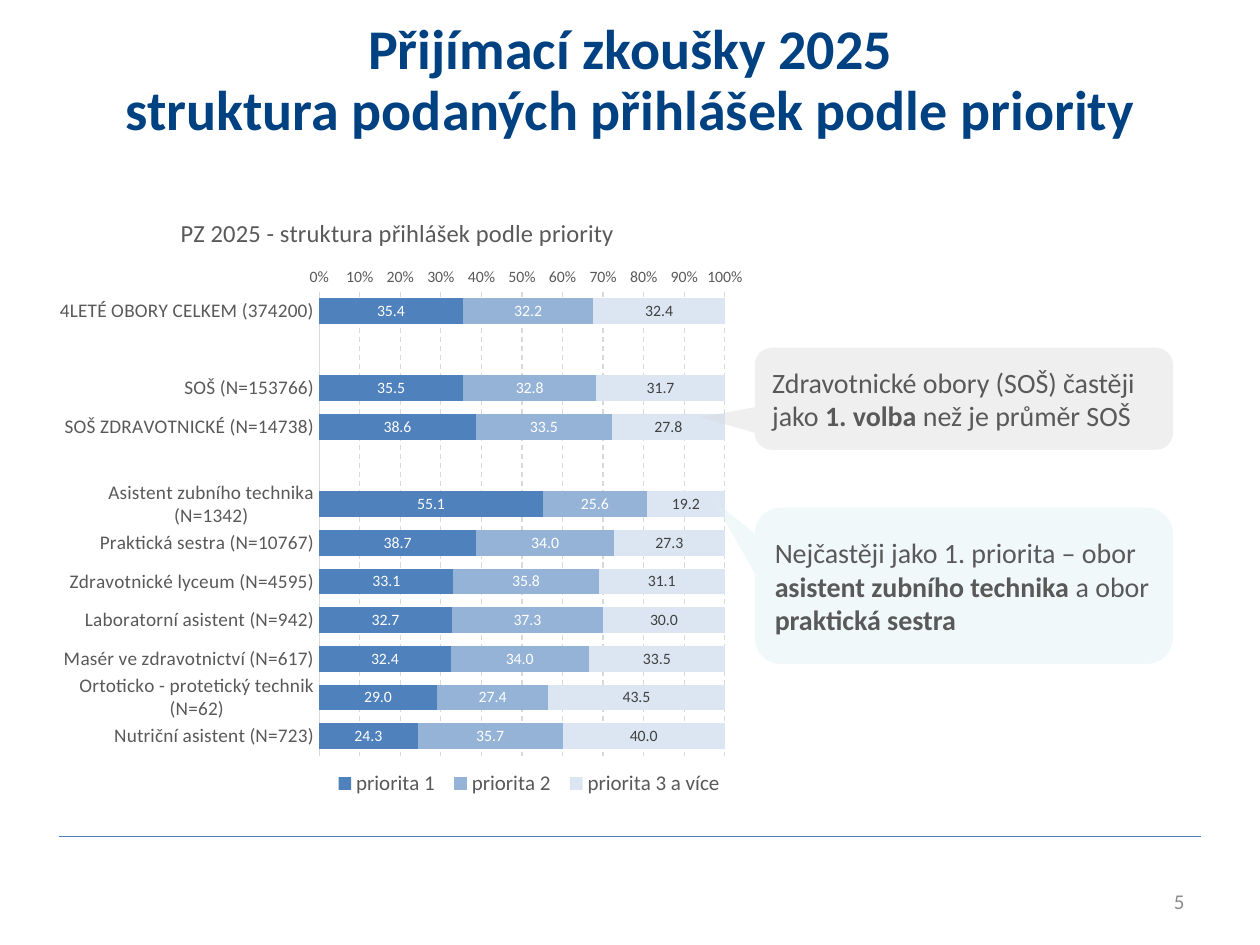
"""Build the slide on the priority structure of 2025 applications."""
from dataclasses import dataclass

from lxml import etree
from pptx import Presentation
from pptx import util as u
from pptx.chart.data import CategoryChartData
from pptx.dml.color import RGBColor
from pptx.enum import chart as charts
from pptx.enum import dml, shapes, text
from pptx.oxml import ns

FONT = "Calibri"
NAVY = RGBColor(0x00, 0x41, 0x82)
RULE_BLUE = RGBColor(0x4B, 0x7E, 0xBC)
DARK_GRAY = RGBColor(0x59, 0x59, 0x59)
NUMBER_GRAY = RGBColor(0x8C, 0x8C, 0x8C)
LIGHT_GRAY = RGBColor(0xD9, 0xD9, 0xD9)
LABEL_GRAY = RGBColor(0x40, 0x40, 0x40)
WHITE = RGBColor(0xFF, 0xFF, 0xFF)
ICE = RGBColor(0xDB, 0xEE, 0xF4)
BLUE = RGBColor(0x4F, 0x81, 0xBD)
MID_BLUE = RGBColor(0x95, 0xB3, 0xD7)
PALE_BLUE = RGBColor(0xDC, 0xE6, 0xF2)


@dataclass(frozen=True)
class Priority:
    name: str
    fill: RGBColor
    label: RGBColor
    shares: tuple


@dataclass(frozen=True)
class Callout:
    top: float
    height: float
    tip: tuple
    fill: RGBColor
    spans: tuple


CATEGORIES = (
    "4LETÉ OBORY CELKEM (374200)", "", "SOŠ (N=153766)",
    "SOŠ ZDRAVOTNICKÉ (N=14738)", "", "Asistent zubního technika (N=1342)",
    "Praktická sestra (N=10767)", "Zdravotnické lyceum (N=4595)",
    "Laboratorní asistent (N=942)", "Masér ve zdravotnictví (N=617)",
    "Ortoticko - protetický technik (N=62)", "Nutriční asistent (N=723)",
)
PRIORITIES = (
    Priority("priorita 1", BLUE, WHITE,
             (35.4, None, 35.5, 38.6, None, 55.1, 38.7, 33.1, 32.7, 32.4, 29.0, 24.3)),
    Priority("priorita 2", MID_BLUE, WHITE,
             (32.2, None, 32.8, 33.5, None, 25.6, 34.0, 35.8, 37.3, 34.0, 27.4, 35.7)),
    Priority("priorita 3 a více", PALE_BLUE, LABEL_GRAY,
             (32.4, None, 31.7, 27.8, None, 19.2, 27.3, 31.1, 30.0, 33.5, 43.5, 40.0)),
)
CALLOUTS = (
    Callout(2.76, 0.81, (-0.63, 0.18), LIGHT_GRAY, (
        ("Zdravotnické obory (SOŠ) častěji jako ", False),
        ("1. volba ", True), ("než je průměr SOŠ", False))),
    Callout(4.03, 1.24, (-0.6, -0.55), ICE, (
        ("Nejčastěji jako 1. priorita – obor ", False),
        ("asistent zubního technika ", True), ("a obor ", False),
        ("praktická sestra", True))),
)


def style_font(font, size: float, color: RGBColor, bold: bool = False) -> None:
    font.name, font.size, font.bold = FONT, u.Pt(size), bold
    font.color.rgb = color


def box_at(left: float, top: float, width: float, height: float) -> tuple:
    return tuple(u.Inches(value) for value in (left, top, width, height))


def place_in_chart(parent, index: int, left: float, top: float,
                   width: float, height: float, inner: bool = False) -> None:
    for old in parent.findall(ns.qn("c:layout")):
        parent.remove(old)
    layout = etree.Element(ns.qn("c:layout"))
    manual = etree.SubElement(layout, ns.qn("c:manualLayout"))
    settings = [("layoutTarget", "inner")] if inner else []
    settings += [("xMode", "edge"), ("yMode", "edge"), ("x", left),
                 ("y", top), ("w", width), ("h", height)]
    for tag, value in settings:
        etree.SubElement(manual, ns.qn(f"c:{tag}")).set("val", str(value))
    parent.insert(index, layout)


def add_title(page) -> None:
    title = page.shapes.title
    title.left, title.top, title.width, title.height = box_at(0.33, 0.12, 9.35, 1.06)
    frame = title.text_frame
    frame.text = "Přijímací zkoušky 2025\nstruktura podaných přihlášek podle priority"
    frame.auto_size = text.MSO_AUTO_SIZE.NONE
    frame.vertical_anchor = text.MSO_ANCHOR.MIDDLE
    for para in frame.paragraphs:
        para.alignment, para.line_spacing = text.PP_ALIGN.CENTER, 0.9
        style_font(para.runs[0].font, 32, NAVY, True)


def add_priority_chart(page) -> None:
    data = CategoryChartData(number_format="0.0")
    data.categories = CATEGORIES
    for priority in PRIORITIES:
        data.add_series(priority.name, priority.shares)
    chart = page.shapes.add_chart(charts.XL_CHART_TYPE.BAR_STACKED_100,
                                  *box_at(0.33, 1.53, 5.65, 4.91), data).chart
    style_font(chart.font, 10, DARK_GRAY)
    chart.has_title = True
    heading = chart.chart_title.text_frame
    heading.text = "PZ 2025 - struktura přihlášek podle priority"
    style_font(heading.paragraphs[0].runs[0].font, 14, DARK_GRAY)

    plot = chart.plots[0]
    plot.gap_width, plot.overlap, plot.vary_by_categories = 50, 100, False
    for series, priority in zip(plot.series, PRIORITIES):
        series.format.fill.solid()
        series.format.fill.fore_color.rgb = priority.fill
        labels = series.data_labels
        labels.show_value = True
        labels.number_format, labels.number_format_is_linked = "0.0", False
        style_font(labels.font, 9, priority.label)

    for axis, size in ((chart.category_axis, 11), (chart.value_axis, 9)):
        axis.major_tick_mark = axis.minor_tick_mark = charts.XL_TICK_MARK.NONE
        style_font(axis.tick_labels.font, size, DARK_GRAY)
    chart.category_axis.reverse_order = True
    values = chart.value_axis
    values.minimum_scale, values.maximum_scale, values.major_unit = 0, 1, 0.1
    values.tick_labels.number_format = "0%"
    values.tick_labels.number_format_is_linked = False
    values.format.line.fill.background()
    grid = values.major_gridlines.format.line
    for line in (chart.category_axis.format.line, grid):
        line.color.rgb, line.width = LIGHT_GRAY, u.Pt(0.75)
    grid.dash_style = dml.MSO_LINE.DASH

    chart.has_legend = True
    legend = chart.legend
    legend.position = charts.XL_LEGEND_POSITION.BOTTOM
    legend.include_in_layout = False
    style_font(legend.font, 12, DARK_GRAY)
    area = chart.element.find(f".//{ns.qn('c:plotArea')}")
    place_in_chart(area, 0, 0.39, 0.16, 0.57, 0.75, inner=True)
    key = chart.element.find(f".//{ns.qn('c:legend')}")
    place_in_chart(key, 1, 0.4, 0.92, 0.57, 0.07)


def add_callout(page, callout: Callout) -> None:
    bubble = page.shapes.add_shape(shapes.MSO_SHAPE.ROUNDED_RECTANGULAR_CALLOUT,
                                   *box_at(5.99, callout.top, 3.32, callout.height))
    bubble.adjustments[0], bubble.adjustments[1] = callout.tip
    bubble.shadow.inherit = False
    bubble.line.fill.background()
    bubble.fill.solid()
    bubble.fill.fore_color.rgb = callout.fill
    color = bubble.element.spPr.find(f"{ns.qn('a:solidFill')}/{ns.qn('a:srgbClr')}")
    etree.SubElement(color, ns.qn("a:alpha")).set("val", "40000")
    frame = bubble.text_frame
    frame.word_wrap, frame.vertical_anchor = True, text.MSO_ANCHOR.MIDDLE
    para = frame.paragraphs[0]
    para.alignment = text.PP_ALIGN.LEFT
    for words, bold in callout.spans:
        span = para.add_run()
        span.text = words
        style_font(span.font, 16, DARK_GRAY, bold)


def add_footer(page) -> None:
    rule = page.shapes.add_connector(shapes.MSO_CONNECTOR.STRAIGHT,
                                     *box_at(0.47, 6.64, 9.53, 6.64))
    rule.line.color.rgb, rule.line.width = RULE_BLUE, u.Pt(0.75)
    etree.SubElement(rule.element.spPr, ns.qn("a:effectLst"))
    frame = page.shapes.add_textbox(*box_at(7.17, 6.95, 2.33, 0.4)).text_frame
    frame.word_wrap, frame.vertical_anchor = True, text.MSO_ANCHOR.MIDDLE
    frame.text = "5"
    frame.paragraphs[0].alignment = text.PP_ALIGN.RIGHT
    style_font(frame.paragraphs[0].runs[0].font, 12, NUMBER_GRAY)


def main() -> None:
    deck = Presentation()
    deck.slide_width, deck.slide_height = u.Inches(10), u.Inches(7.5)
    page = deck.slides.add_slide(deck.slide_layouts[5])
    add_title(page)
    add_priority_chart(page)
    add_footer(page)
    for callout in CALLOUTS:
        add_callout(page, callout)
    deck.save("out.pptx")


if __name__ == "__main__":
    main()
